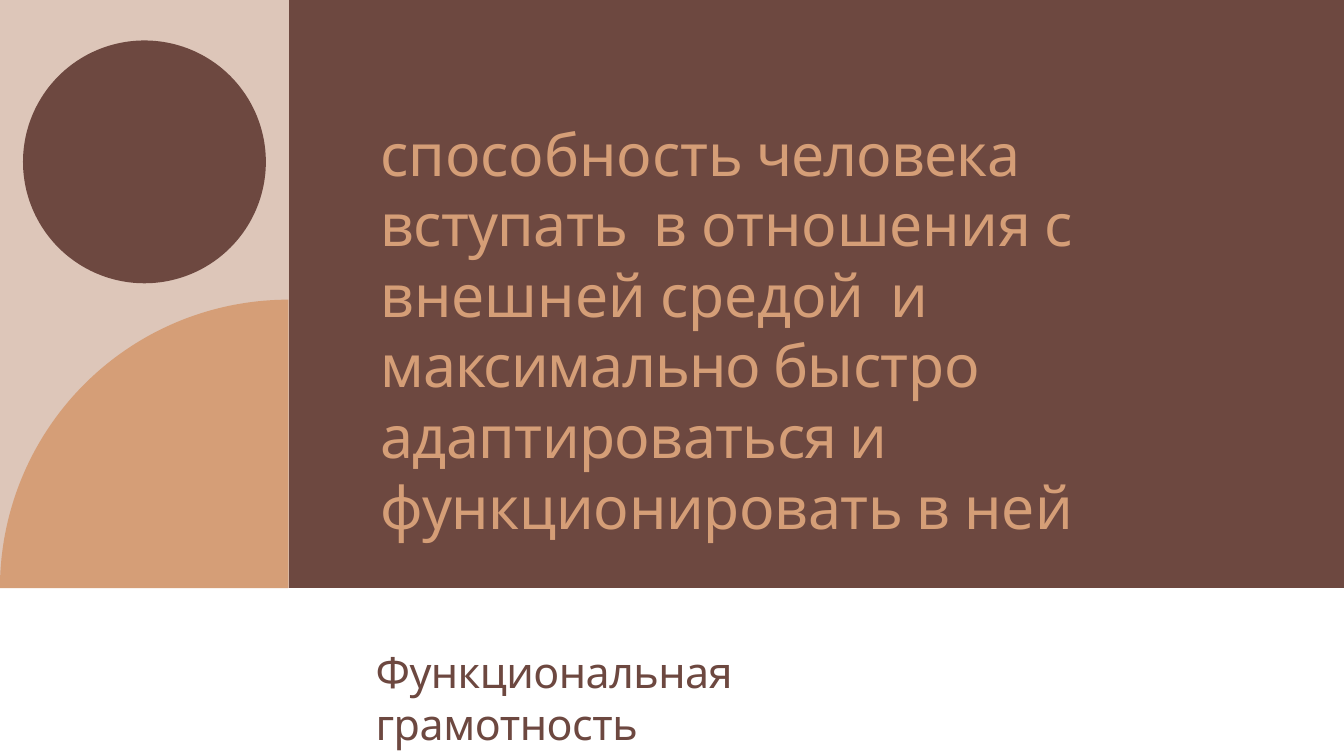
from math import cos, pi, sin

from pptx import Presentation
from pptx.dml.color import RGBColor
from pptx.enum.shapes import MSO_SHAPE as Shape
from pptx.enum.text import MSO_AUTO_SIZE as AutoSize
from pptx.util import Cm, Pt

BROWN = RGBColor(0x6D, 0x48, 0x40)
SAND = RGBColor(0xD5, 0x9E, 0x77)
BLUSH = RGBColor(0xDD, 0xC6, 0xB9)
WHITE = RGBColor(0xFF, 0xFF, 0xFF)

WIDTH, HEIGHT = 50.8, 28.58
SIDE, BAND = 10.92, 22.23
RADIUS = 10.9
ARC_STEPS = 90


def paint(shape, color):
    shape.shadow.inherit = False
    shape.fill.solid()
    shape.fill.fore_color.rgb = color
    shape.line.fill.background()


def add_text(page, bounds, inset, size, color, before, spans):
    box = page.shapes.add_textbox(*map(Cm, bounds))
    frame = box.text_frame
    frame.word_wrap = True
    frame.auto_size = AutoSize.SHAPE_TO_FIT_TEXT
    frame.margin_left = frame.margin_right = frame.margin_bottom = 0
    frame.margin_top = Cm(inset)
    para = frame.paragraphs[0]
    para.space_before = Pt(before)
    para.line_spacing = 1.0
    for text, spacing in spans:
        span = para.add_run()
        span.text = text
        span.font.name = "Cabin"
        span.font.size = Pt(size)
        span.font.color.rgb = color
        span._r.get_or_add_rPr().set("spc", str(round(spacing * 100)))


deck = Presentation()
deck.slide_width, deck.slide_height = Cm(WIDTH), Cm(HEIGHT)
page = deck.slides.add_slide(deck.slide_layouts[6])
page.background.fill.solid()
page.background.fill.fore_color.rgb = WHITE

for kind, bounds, color in [
    (Shape.RECTANGLE, (SIDE, 0, WIDTH - SIDE, BAND), BROWN),
    (Shape.RECTANGLE, (0, BAND, WIDTH, HEIGHT - BAND), WHITE),
    (Shape.RECTANGLE, (0, 0, SIDE, BAND), BLUSH),
    (Shape.OVAL, (0.87, 1.53, 9.18, 9.18), BROWN),
]:
    paint(page.shapes.add_shape(kind, *map(Cm, bounds)), color)

angles = [step * pi / 2 / ARC_STEPS for step in range(ARC_STEPS + 1)]
arc = [(Cm(RADIUS * (1 - cos(a))), Cm(BAND - RADIUS * sin(a))) for a in angles]
outline = page.shapes.build_freeform(Cm(RADIUS), Cm(BAND))
outline.add_line_segments(arc, close=True)
paint(outline.convert_to_shape(), SAND)

add_text(page, (14.38, 4.39, 32.77, 13.44), 0.05, 63, SAND, 1.1, [
    ("способность ", -0.1),
    ("человека ", -0.9),
    ("вступать  ", -0.7),
    ("в ", 0.5),
    ("отношения", -0.1),
    (" с ", 0.3),
    ("внешней ", 0.1),
    ("средой  ", -0.2),
    ("и ", 1.5),
    ("максимально ", -1.2),
    ("быстро  ", -0.5),
    ("адаптироваться ", -0.7),
    ("и  ", 1.5),
    ("функционировать ", -0.4),
    ("в ней", 0.5),
])
add_text(page, (14.2, 24.38, 22.43, 2.01), 0.03, 46, BROWN, 0.9, [
    ("Функциональная ", -0.6),
    ("грамотность", -0.5),
])

deck.save("out.pptx")
